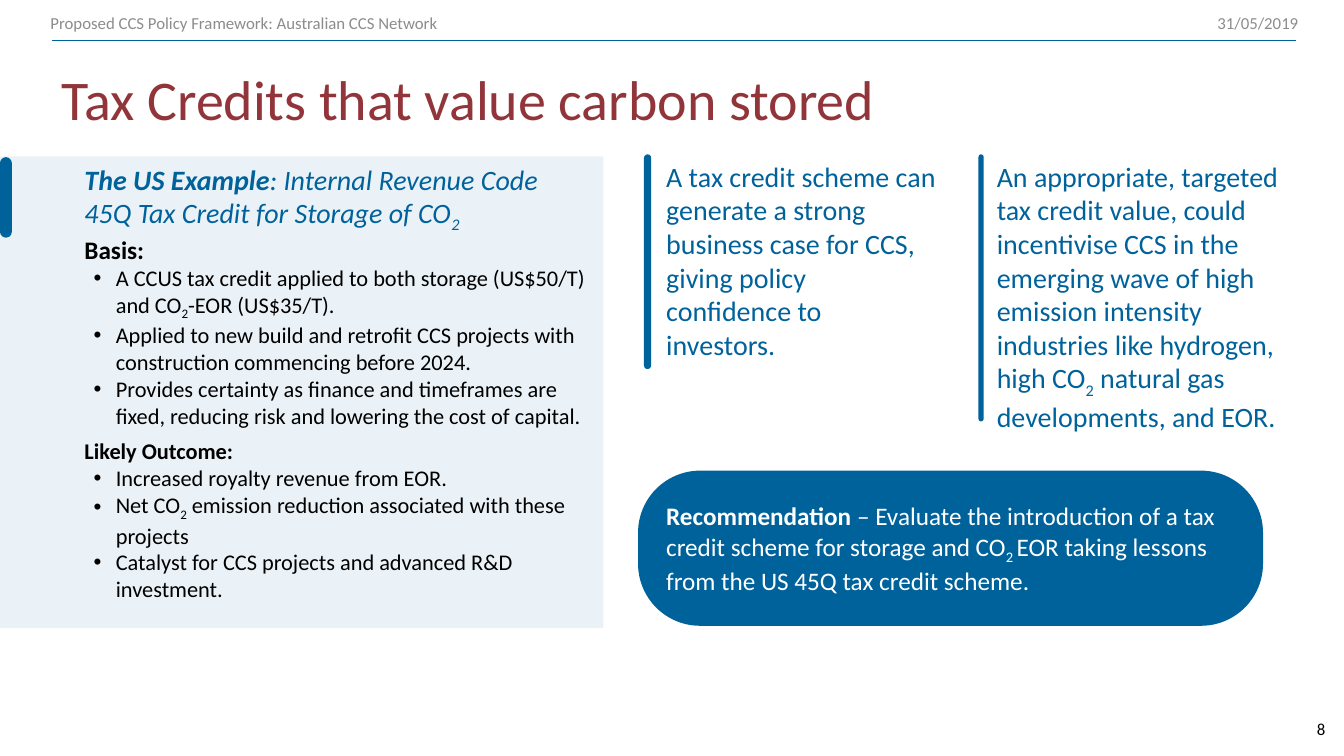
from lxml import etree
from pptx import Presentation
from pptx.dml.color import RGBColor
from pptx.enum.shapes import MSO_CONNECTOR, MSO_SHAPE
from pptx.enum.text import MSO_ANCHOR, PP_ALIGN
from pptx.oxml.ns import qn
from pptx.util import Cm, Pt

BLUE = RGBColor(0x00, 0x62, 0x9B)
RED = RGBColor(0x91, 0x35, 0x3B)
GREY = RGBColor(0x8C, 0x8C, 0x8C)
BLACK = RGBColor(0, 0, 0)
WHITE = RGBColor(255, 255, 255)
FONT = "Calibri"

# A run is (text, flags): b bold, i italic, s subscript. A paragraph is a list of runs.
HEADER = [("Proposed CCS Policy Framework: Australian CCS Network", "")]
DATE = [("31/05/2019", "")]
TITLE = [("Tax Credits that value carbon stored", "")]
PAGE_NUMBER = [("8", "")]
BUSINESS_CASE = [("A tax credit scheme can generate a strong business case for CCS, "
                  "giving policy confidence to investors.", "")]
TARGETED_CREDIT = [
    ("An appropriate, targeted tax credit value, could incentivise CCS in the emerging "
     "wave of high emission intensity industries like hydrogen, high CO", ""),
    ("2", "s"), (" natural gas developments, and EOR.", "")]
RECOMMENDATION = [
    ("Recommendation", "b"),
    (" – Evaluate the introduction of a tax credit scheme for storage and CO", ""),
    ("2 ", "s"), ("EOR taking lessons from the US 45Q tax credit scheme.", "")]

EXAMPLE_HEADING = [
    [("The US Example", "bi"), (": Internal Revenue Code", "i")],
    [("45Q Tax Credit for Storage of CO", "i"), ("2", "is")]]
# (heading, size, space before, bullets)
EXAMPLE_SECTIONS = [
    ("Basis:", 18, 0, [
        [("A CCUS tax credit applied to both storage (US$50/T) and CO", ""),
         ("2", "s"), ("-EOR (US$35/T).", "")],
        [("Applied to new build and retrofit CCS projects with construction "
          "commencing before 2024.", "")],
        [("Provides certainty as finance and timeframes are fixed, reducing risk "
          "and lowering the cost of capital.", "")]]),
    ("Likely Outcome:", 16, 6, [
        [("Increased royalty revenue from EOR.", "")],
        [("Net CO", ""), ("2", "s"),
         (" emission reduction associated with these projects", "")],
        [("Catalyst for CCS projects and advanced R&D investment.", "")]])]

# Left, top, width, height in cm
RULE_LEFT, RULE_RIGHT, RULE_TOP = 1.3, 32.66, 1.02
PANEL = (0, 3.94, 15.21, 11.89)
RECOMMENDATION_BOX = (16.08, 11.86, 15.75, 3.91)
ACCENT_BARS = [(16.23, 3.89, 0.18, 5.41), (24.66, 3.89, 0.13, 6.73), (0, 3.96, 0.3, 2.03)]

prs = Presentation()
prs.slide_width, prs.slide_height = Cm(33.87), Cm(19.05)
slide = prs.slides.add_slide(prs.slide_layouts[6])


def add_runs(paragraph, runs, size, color):
    for text, flags in runs:
        run = paragraph.add_run()
        run.text = text
        font = run.font
        font.name, font.size = FONT, Pt(size)
        font.bold, font.italic = "b" in flags, "i" in flags
        font.color.rgb = color
        if "s" in flags:
            run._r.get_or_add_rPr().set("baseline", "-25000")


def add_bullet(paragraph):
    properties = paragraph._p.get_or_add_pPr()
    properties.set("marL", str(Cm(0.79)))
    properties.set("indent", str(-Cm(0.56)))
    etree.SubElement(properties, qn("a:buFont")).set("typeface", "Arial")
    etree.SubElement(properties, qn("a:buChar")).set("char", "•")


def add_frame(box, anchor=MSO_ANCHOR.TOP):
    frame = slide.shapes.add_textbox(*map(Cm, box)).text_frame
    frame.word_wrap = True
    frame.vertical_anchor = anchor
    return frame


def add_line_of_text(box, runs, size, color, align=PP_ALIGN.LEFT, anchor=MSO_ANCHOR.TOP):
    paragraph = add_frame(box, anchor).paragraphs[0]
    paragraph.alignment = align
    add_runs(paragraph, runs, size, color)
    return paragraph


def add_blue_shape(kind, box, corner=None):
    shape = slide.shapes.add_shape(kind, *map(Cm, box))
    shape.shadow.inherit = False
    shape.fill.solid()
    shape.fill.fore_color.rgb = BLUE
    shape.line.fill.background()
    if corner is not None:
        shape.adjustments[0] = corner
    return shape


rule = slide.shapes.add_connector(MSO_CONNECTOR.STRAIGHT, Cm(RULE_LEFT), Cm(RULE_TOP),
                                  Cm(RULE_RIGHT), Cm(RULE_TOP))
rule.line.color.rgb = BLUE
rule.line.width = Pt(0.75)
etree.SubElement(rule._element.spPr, qn("a:effectLst"))

panel = add_blue_shape(MSO_SHAPE.RECTANGLE, PANEL)
panel_color = panel._element.spPr.find(qn("a:solidFill")).find(qn("a:srgbClr"))
etree.SubElement(panel_color, qn("a:alpha")).set("val", "8000")

recommendation = add_blue_shape(MSO_SHAPE.ROUNDED_RECTANGLE, RECOMMENDATION_BOX, 0.4).text_frame
recommendation.word_wrap = True
recommendation.vertical_anchor = MSO_ANCHOR.MIDDLE
recommendation.paragraphs[0].alignment = PP_ALIGN.LEFT
add_runs(recommendation.paragraphs[0], RECOMMENDATION, 18, WHITE)

title = add_line_of_text((1.3, 1.63, 30.91, 1.88), TITLE, 40, RED, anchor=MSO_ANCHOR.MIDDLE)
title.line_spacing = 0.9
add_line_of_text((1.02, 0.15, 14.5, 0.86), HEADER, 12, GREY, anchor=MSO_ANCHOR.MIDDLE)
add_line_of_text((23.24, 0.15, 9.73, 0.86), DATE, 12, GREY, PP_ALIGN.RIGHT, MSO_ANCHOR.MIDDLE)
add_line_of_text((31.39, 17.98, 2.26, 1.4), PAGE_NUMBER, 12, BLACK, PP_ALIGN.RIGHT)
add_line_of_text((16.54, 3.89, 7.32, 6.43), BUSINESS_CASE, 20, BLUE)
add_line_of_text((24.87, 3.89, 8.1, 7.09), TARGETED_CREDIT, 20, BLUE)

example = add_frame((1.88, 3.96, 13.41, 11.15))
add_runs(example.paragraphs[0], EXAMPLE_HEADING[0], 20, BLUE)
add_runs(example.add_paragraph(), EXAMPLE_HEADING[1], 20, BLUE)
for heading, size, space_before, bullets in EXAMPLE_SECTIONS:
    section = example.add_paragraph()
    section.space_before = Pt(space_before)
    add_runs(section, [(heading, "b")], size, BLACK)
    for runs in bullets:
        bullet = example.add_paragraph()
        add_bullet(bullet)
        add_runs(bullet, runs, 16, BLACK)

for bar in ACCENT_BARS:
    add_blue_shape(MSO_SHAPE.ROUNDED_RECTANGLE, bar, 0.5)

prs.save("out.pptx")
